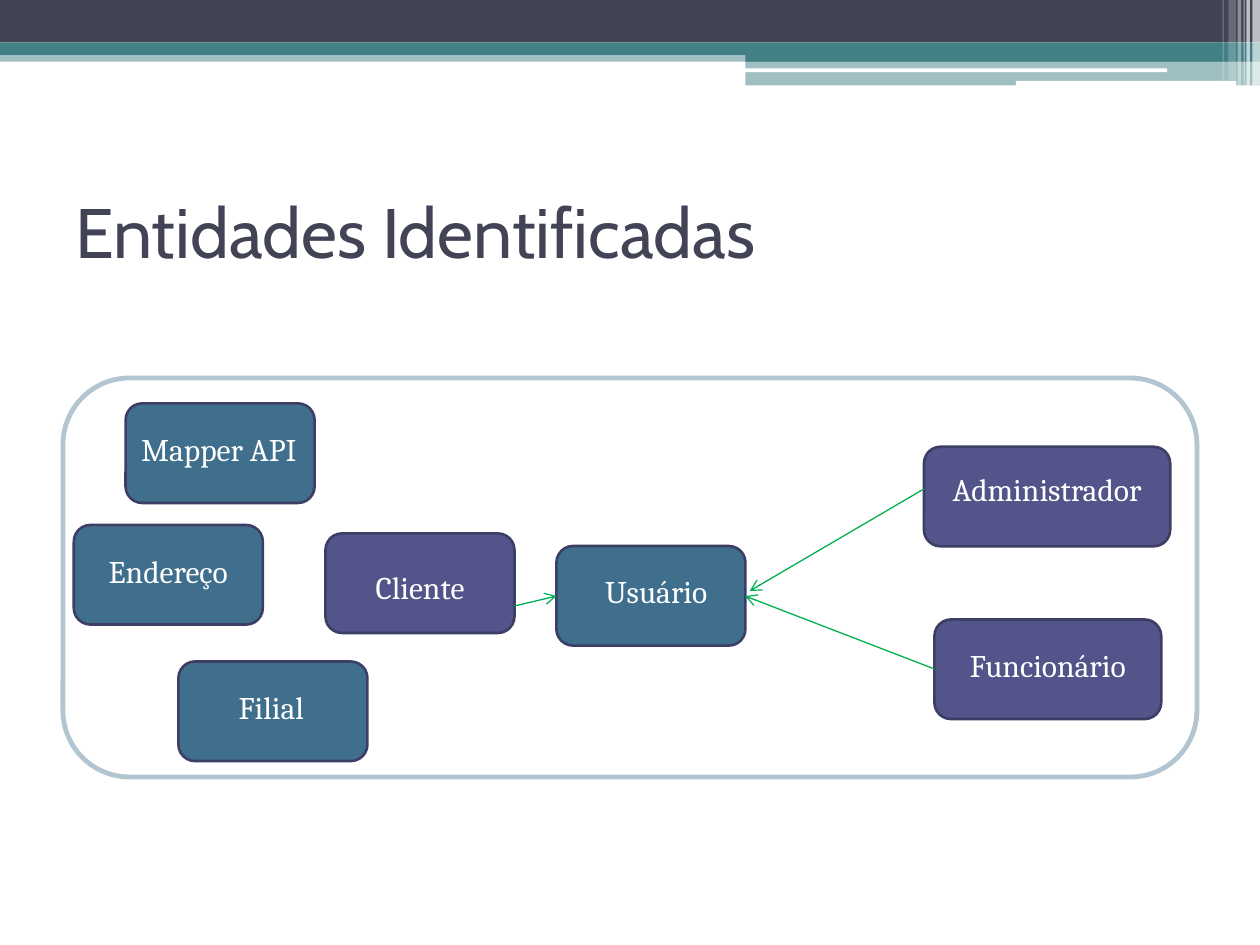
"""Build the slide of identified entities and the arrows that link them."""
from typing import NamedTuple, Optional

from lxml import etree
from pptx import Presentation, util as u
from pptx.dml.color import RGBColor
from pptx.enum import shapes, text
from pptx.oxml import ns

WHITE = RGBColor(0xFF, 0xFF, 0xFF)
SLATE = RGBColor(0x42, 0x44, 0x56)
TEAL = RGBColor(0x43, 0x80, 0x86)
BLUE = RGBColor(0x40, 0x6F, 0x8D)
PURPLE = RGBColor(0x53, 0x54, 0x8A)
OUTLINE = RGBColor(0x3D, 0x3E, 0x66)
GREEN = RGBColor(0x00, 0xB0, 0x50)

RECTANGLE = shapes.MSO_SHAPE.RECTANGLE
ROUNDED = shapes.MSO_SHAPE.ROUNDED_RECTANGLE
ENTITY_HEIGHT = 56.9
LABEL_HEIGHT = 29


class Box(NamedTuple):
    left: float
    top: float
    width: float
    height: float


class Band(NamedTuple):
    box: Box
    color: RGBColor
    opacity: int = 100
    kind: shapes.MSO_SHAPE = RECTANGLE


class Stripe(NamedTuple):
    left: float
    width: float
    height: float
    opacity: int


class Entity(NamedTuple):
    name: str
    left: float
    top: float
    color: RGBColor
    label_top: float
    label_shift: float = 0
    width: float = 108


class Arrow(NamedTuple):
    start_x: float
    start_y: float
    end_x: float
    end_y: float


BANDS = [
    Band(Box(0, 28.8, 720, 6.5), TEAL, 50),
    Band(Box(0, 0, 720, 24.2), SLATE),
    Band(Box(0, 24.2, 720, 7.2), TEAL),
    Band(Box(426, 28.1, 294, 7.2), TEAL),
    Band(Box(426, 34.9, 294, 14), TEAL, 50),
    Band(Box(425.8, 39.1, 241.2, 2.2), WHITE, kind=ROUNDED),
    Band(Box(580.5, 46.3, 126, 2.9), WHITE, kind=ROUNDED),
]
STRIPES = [
    Stripe(715.6, 4.4, 48.9, 65),
    Stripe(712.2, 2, 48.9, 65),
    Stripe(710.6, 0.7, 48.9, 60),
    Stripe(707.2, 2, 48.9, 40),
    Stripe(702, 4.3, 46.1, 20),
    Stripe(698.6, 0.7, 46.1, 30),
]
ENTITIES = [
    Entity("Endereço", 42.2, 300, BLUE, 311.8),
    Entity("Filial", 102, 378, BLUE, 389.5, -1),
    Entity("Mapper API", 71.8, 230.5, BLUE, 242, -0.7),
    Entity("Funcionário", 534, 354, PURPLE, 365.8, width=129.6),
    Entity("Administrador", 528, 255.3, PURPLE, 265, width=140.7),
    Entity("Usuário", 318, 312, BLUE, 323.3, 3),
    Entity("Cliente", 186, 304.8, PURPLE, 321.1),
]
ARROWS = [
    Arrow(528, 279.4, 428.4, 337.7),
    Arrow(534, 382.3, 425.8, 340.6),
    Arrow(294, 346.3, 318, 340.6),
]


def set_opacity(shape, percent: int) -> None:
    for color in shape.element.spPr.iter(ns.qn("a:srgbClr")):
        alpha = etree.SubElement(color, ns.qn("a:alpha"))
        alpha.set("val", str(percent * 1000))


def add_box(slide, kind, box: Box, fill: Optional[RGBColor],
            line: Optional[RGBColor] = None, line_width: float = 0):
    shape = slide.shapes.add_shape(kind, *(u.Pt(length) for length in box))
    shape.shadow.inherit = False
    if fill is None:
        shape.fill.background()
    else:
        shape.fill.solid()
        shape.fill.fore_color.rgb = fill
    if line is None:
        shape.line.fill.background()
    else:
        shape.line.color.rgb = line
        shape.line.width = u.Pt(line_width)
    return shape


def add_band(slide, band: Band) -> None:
    shape = add_box(slide, band.kind, band.box, band.color)
    if band.opacity < 100:
        set_opacity(shape, band.opacity)


def add_text(slide, box: Box, words: str, size: float, font: str, color: RGBColor,
             alignment: text.PP_ALIGN, anchor: text.MSO_ANCHOR) -> None:
    shape = slide.shapes.add_textbox(*(u.Pt(length) for length in box))
    frame = shape.text_frame
    frame.word_wrap = True
    frame.vertical_anchor = anchor
    paragraph = frame.paragraphs[0]
    paragraph.alignment = alignment
    run = paragraph.add_run()
    run.text = words
    run.font.size = u.Pt(size)
    run.font.name = font
    run.font.color.rgb = color


def add_entity(slide, entity: Entity) -> None:
    add_box(slide, ROUNDED, Box(entity.left, entity.top, entity.width, ENTITY_HEIGHT),
            entity.color, OUTLINE, 1.5)
    label = Box(entity.left + entity.label_shift, entity.label_top,
                entity.width, LABEL_HEIGHT)
    add_text(slide, label, entity.name, 18, "Cambria", WHITE,
             text.PP_ALIGN.CENTER, text.MSO_ANCHOR.TOP)


def add_arrow(slide, arrow: Arrow) -> None:
    connector = slide.shapes.add_connector(
        shapes.MSO_CONNECTOR.STRAIGHT, *(u.Pt(length) for length in arrow))
    connector.line.color.rgb = GREEN
    connector.line.width = u.Pt(0.75)
    tail = etree.SubElement(connector.line._get_or_add_ln(), ns.qn("a:tailEnd"))
    tail.set("type", "arrow")
    etree.SubElement(connector.element.spPr, ns.qn("a:effectLst"))


def main() -> None:
    presentation = Presentation()
    presentation.slide_width = u.Pt(720)
    presentation.slide_height = u.Pt(540)
    slide = presentation.slides.add_slide(presentation.slide_layouts[6])
    for band in BANDS:
        add_band(slide, band)
    for stripe in STRIPES:
        box = Box(stripe.left, 0, stripe.width, stripe.height)
        add_band(slide, Band(box, WHITE, stripe.opacity))
    add_text(slide, Box(36, 90, 648, 84), "Entidades Identificadas", 40, "Cabin",
             SLATE, text.PP_ALIGN.LEFT, text.MSO_ANCHOR.MIDDLE)
    frame = add_box(slide, ROUNDED, Box(36, 216, 648, 228), None, BLUE, 2.75)
    set_opacity(frame, 40)
    for entity in ENTITIES:
        add_entity(slide, entity)
    for arrow in ARROWS:
        add_arrow(slide, arrow)
    presentation.save("out.pptx")


if __name__ == "__main__":
    main()
